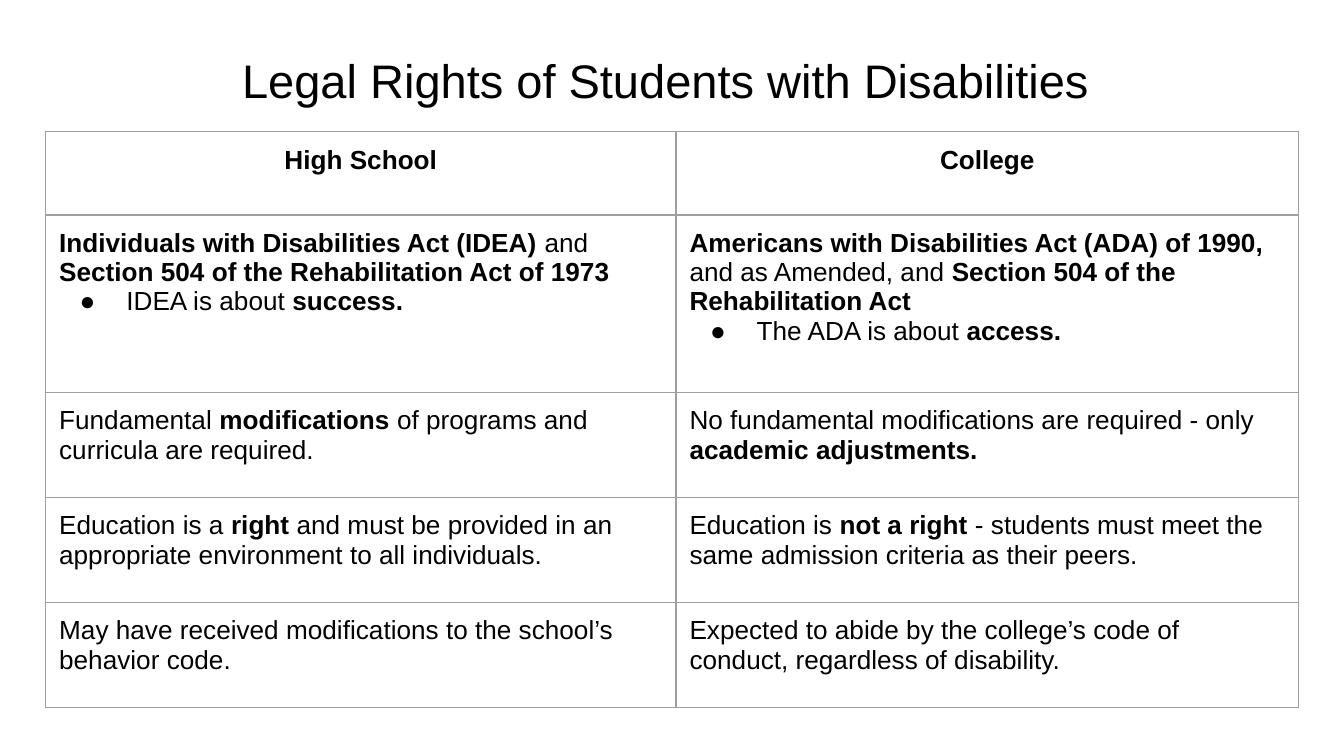
from lxml import etree
from pptx import Presentation
from pptx.dml.color import RGBColor
from pptx.enum import text
from pptx.oxml import ns
from pptx.util import Pt

BLACK = RGBColor(0x00, 0x00, 0x00)
WHITE = RGBColor(0xFF, 0xFF, 0xFF)
GRAY = RGBColor(0x9E, 0x9E, 0x9E)
LEFT, WIDTH = 24.5, 671.2
COLS = [337.7, 333.5]
ROWS = [44.6, 95.2, 56.2, 56.2, 56.2]
MARGINS = {f"margin_{side}": Pt(7.2) for side in ("left", "top", "right", "bottom")}
BULLET = "●"

# Text between ** marks is bold; a line that starts with the bullet is a list item.
CELLS = [
    ["**High School**", "**College**"],
    ["**Individuals with Disabilities Act (IDEA)** and "
     "**Section 504 of the Rehabilitation Act of 1973**\n"
     "●IDEA is about **success.**",
     "**Americans with Disabilities Act (ADA) of 1990,** and as Amended, and "
     "**Section 504 of the Rehabilitation Act**\n"
     "●The ADA is about **access.**"],
    ["Fundamental **modifications **of programs and curricula are required.",
     "No fundamental modifications are required - only **academic adjustments.**"],
    ["Education is a **right** and must be provided in an appropriate "
     "environment to all individuals.",
     "Education is **not a right **- students must meet the same admission "
     "criteria as their peers."],
    ["May have received modifications to the school’s behavior code.",
     "Expected to abide by the college’s code of conduct, regardless of disability."],
]


def add_runs(p, marked, size):
    """Add the marked text to a paragraph, with every second ** part in bold."""
    for i, part in enumerate(marked.split("**")):
        if part:
            r = p.add_run()
            r.text = part
            r.font.color.rgb = BLACK
            fmt = {"name": "Arial", "size": Pt(size), "bold": i % 2 == 1}
            for name, value in fmt.items():
                setattr(r.font, name, value)


def add_borders(cell):
    tcPr = cell._tc.get_or_add_tcPr()
    for tag in ("a:lnL", "a:lnR", "a:lnT", "a:lnB"):
        ln = etree.SubElement(tcPr, ns.qn(tag), w=str(Pt(0.75)))
        fill = etree.SubElement(ln, ns.qn("a:solidFill"))
        etree.SubElement(fill, ns.qn("a:srgbClr"), val=str(GRAY))


prs = Presentation()
prs.slide_width, prs.slide_height = Pt(720), Pt(405)
s = prs.slides.add_slide(prs.slide_layouts[6])
s.background.fill.solid()
s.background.fill.fore_color.rgb = WHITE

# Title
tf = s.shapes.add_textbox(Pt(LEFT), Pt(19.4), Pt(WIDTH), Pt(45.4)).text_frame
fmt = {"word_wrap": True, "vertical_anchor": text.MSO_ANCHOR.BOTTOM, **MARGINS}
for name, value in fmt.items():
    setattr(tf, name, value)
p = tf.paragraphs[0]
p.alignment = text.PP_ALIGN.CENTER
add_runs(p, "Legal Rights of Students with Disabilities ", 25.2)

# Comparison table
table = s.shapes.add_table(len(ROWS), len(COLS), Pt(LEFT), Pt(70.6),
                           Pt(WIDTH), Pt(sum(ROWS))).table
table.first_row = table.horz_banding = False
for col, width in zip(table.columns, COLS):
    col.width = Pt(width)
for row, height in zip(table.rows, ROWS):
    row.height = Pt(height)

for i, row in enumerate(CELLS):
    for j, content in enumerate(row):
        cell = table.cell(i, j)
        add_borders(cell)
        cell.fill.background()
        for name, value in MARGINS.items():
            setattr(cell, name, value)
        tf = cell.text_frame
        for k, line in enumerate(content.split("\n")):
            p = tf.add_paragraph() if k else tf.paragraphs[0]
            p.alignment = text.PP_ALIGN.LEFT if i else text.PP_ALIGN.CENTER
            if line.startswith(BULLET):
                pPr = p._p.get_or_add_pPr()
                pPr.set("marL", str(Pt(36)))
                pPr.set("indent", str(-Pt(25)))
                color = etree.SubElement(pPr, ns.qn("a:buClr"))
                etree.SubElement(color, ns.qn("a:srgbClr"), val=str(BLACK))
                etree.SubElement(pPr, ns.qn("a:buFont"), typeface="Arial")
                etree.SubElement(pPr, ns.qn("a:buChar"), char=BULLET)
            add_runs(p, line.removeprefix(BULLET), 14)

prs.save("out.pptx")
